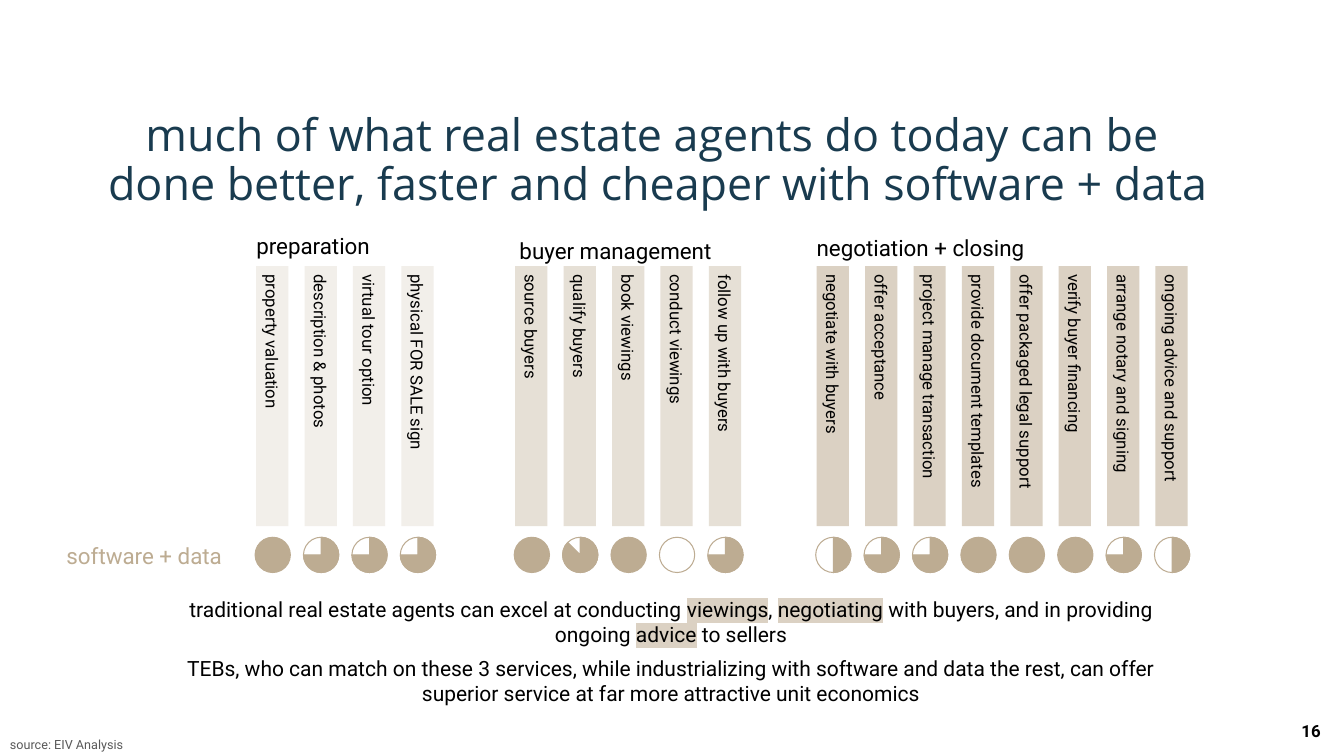
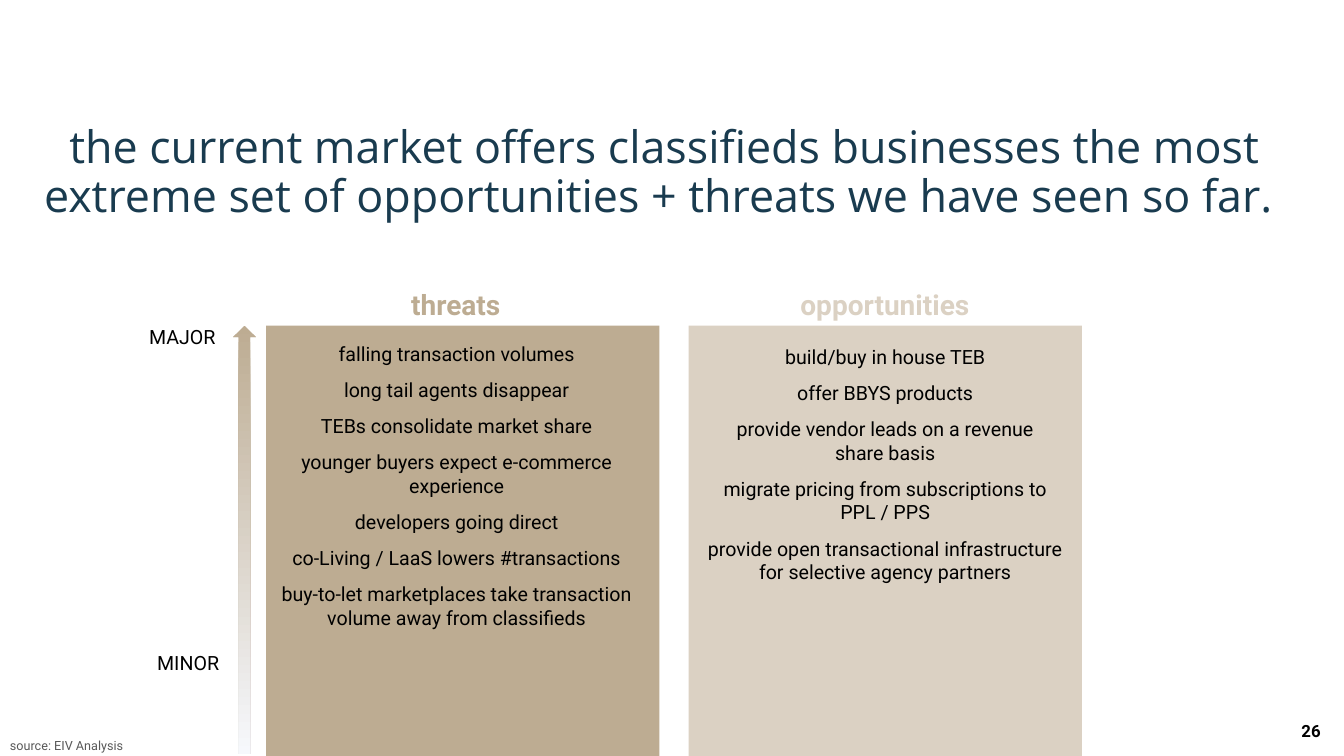
from dataclasses import asdict, dataclass
from typing import Any, NamedTuple, Sequence

from lxml import etree
from pptx import Presentation
from pptx.dml.color import RGBColor
from pptx.enum.shapes import MSO_SHAPE
from pptx.enum.text import MSO_ANCHOR, MSO_AUTO_SIZE, PP_ALIGN
from pptx.oxml.ns import qn
from pptx.util import Pt

RECTANGLE, ELLIPSE, PIE, UP_ARROW = (
    MSO_SHAPE.RECTANGLE, MSO_SHAPE.OVAL, MSO_SHAPE.PIE, MSO_SHAPE.UP_ARROW)
LEFT, CENTER = PP_ALIGN.LEFT, PP_ALIGN.CENTER
TOP, MIDDLE = MSO_ANCHOR.TOP, MSO_ANCHOR.MIDDLE
NO_AUTOFIT = MSO_AUTO_SIZE.NONE

# Shared look
PX = 9144  # EMU per px, 100 px to the inch
SLIDE_WIDTH, SLIDE_HEIGHT = 1333, 750
NAVY = RGBColor(0x19, 0x3B, 0x4F)
TAN = RGBColor(0xBD, 0xAC, 0x92)
SAND = RGBColor(0xDB, 0xD1, 0xC3)
MIST = RGBColor(0xF6, 0xF8, 0xFC)
GREY = RGBColor(0x59, 0x59, 0x59)
BLACK = RGBColor(0, 0, 0)
WHITE = RGBColor(0xFF, 0xFF, 0xFF)


@dataclass(frozen=True)
class Box:
    left: int
    top: int
    width: int
    height: int


@dataclass(frozen=True)
class Style:
    size: int
    color: RGBColor = BLACK
    bold: bool = False
    name: str = "Roboto"


class Insets(NamedTuple):
    left: int
    top: int
    right: int
    bottom: int


class Span(NamedTuple):
    text: str
    marked: bool = False


class Activity(NamedTuple):
    label: str
    share: float  # part that software and data can do


class Stage(NamedTuple):
    heading: str
    heading_box: Box
    first_bar: int
    opacity: int
    activities: Sequence[Activity]


class Column(NamedTuple):
    heading: str
    heading_box: Box
    panel: Box
    insets: Insets
    color: RGBColor
    items: Sequence[str]


TITLE = Style(32, NAVY, name="Open Sans")
PAGE_NUMBER = Style(12, bold=True)
SOURCE = Style(9, GREY)
STAGE_HEADING = Style(16)
ROW_LABEL = Style(16, TAN)
BAR_LABEL = Style(12)
TAKEAWAY = Style(15)
LIST_ITEM = Style(14)

NO_INSETS = Insets(0, 0, 0, 0)
WIDE_INSETS = Insets(10, 10, 10, 10)
TEXT_INSETS = Insets(10, 5, 10, 5)

# Slide content
BAR_TOP, BAR_WIDTH, BAR_LENGTH, BAR_PITCH = 264, 32, 258, 48
PIE_TOP, PIE_SIZE = 533, 35
PIE_FULL_TURN = 216  # 360 degrees in the units of the pie adjustment

STAGES = (
    Stage("preparation", Box(223, 230, 175, 38), 254, 34, (
        Activity("property valuation", 1),
        Activity("description & photos", 0.75),
        Activity("virtual tour option", 0.75),
        Activity("physical FOR SALE sign", 0.75),
    )),
    Stage("buyer management", Box(477, 235, 267, 29), 511, 67, (
        Activity("source buyers", 1),
        Activity("qualify buyers", 0.875),
        Activity("book viewings", 1),
        Activity("conduct viewings", 0),
        Activity("follow up with buyers", 0.75),
    )),
    Stage("negotiation + closing", Box(756, 232, 314, 29), 810, 100, (
        Activity("negotiate with buyers", 0.5),
        Activity("offer acceptance", 0.75),
        Activity("project manage transaction", 0.75),
        Activity("provide document templates", 1),
        Activity("offer packaged legal support", 1),
        Activity("verify buyer financing", 1),
        Activity("arrange notary and signing", 0.75),
        Activity("ongoing advice and support", 0.5),
    )),
)

TAKEAWAYS = (
    (Span("traditional real estate agents can excel at conducting "),
     Span("viewings", True), Span(", "), Span("negotiating", True),
     Span(" with buyers, and in providing ongoing "),
     Span("advice", True), Span(" to sellers")),
    (Span("TEBs, who can match on these 3 services, while industrializing with "
          "software and data the rest, can offer superior service at far more "
          "attractive unit economics"),),
)

COLUMNS = (
    Column("threats", Box(398, 280, 110, 44), Box(264, 323, 390, 427),
           Insets(7, 16, 19, 5), TAN, (
               "falling transaction volumes",
               "long tail agents disappear",
               "TEBs consolidate market share",
               "younger buyers expect e-commerce experience",
               "developers going direct",
               "co-Living / LaaS lowers #transactions",
               "buy-to-let marketplaces take transaction volume away from classifieds",
           )),
    Column("opportunities", Box(784, 280, 188, 44), Box(683, 323, 390, 427),
           Insets(10, 19, 10, 5), SAND, (
               "build/buy in house TEB",
               "offer BBYS products",
               "provide vendor leads on a revenue\nshare basis",
               "migrate pricing from subscriptions to\nPPL / PPS",
               "provide open transactional infrastructure for selective agency partners",
           )),
)

SCALE_LABELS = (
    ("MAJOR", Box(138, 317, 87, 34)),
    ("MINOR", Box(146, 641, 83, 34)),
)


# Drawing helpers
def apply(target: Any, values: dict[str, Any]) -> None:
    for name, value in values.items():
        setattr(target, name, value)


def emu(box: Box) -> dict[str, int]:
    return {side: length * PX for side, length in asdict(box).items()}


def add_span(paragraph: Any, span: Span, style: Style) -> None:
    for index, line in enumerate(span.text.split("\n")):
        if index:
            paragraph.add_line_break()
        run = paragraph.add_run()
        run.text = line
        apply(run.font, {"size": Pt(style.size), "bold": style.bold, "name": style.name})
        run.font.color.rgb = style.color
        if span.marked:
            highlight = etree.Element(qn("a:highlight"))
            etree.SubElement(highlight, qn("a:srgbClr"), val=str(SAND))
            run.font.fill  # the colour element precedes the highlight
            run.font._element.find(qn("a:solidFill")).addnext(highlight)


def write(shape: Any, paragraphs: Sequence[Sequence[Span]], style: Style,
          insets: Insets = TEXT_INSETS, align: Any = LEFT, anchor: Any = TOP,
          wrap: bool = True, gap_before: int = 0, gap_after: int = 0,
          line_spacing: float = 1.0) -> None:
    frame = shape.text_frame
    apply(frame, {"word_wrap": wrap, "auto_size": NO_AUTOFIT, "vertical_anchor": anchor})
    apply(frame, {f"margin_{side}": length * PX
                  for side, length in insets._asdict().items()})
    for index, spans in enumerate(paragraphs):
        paragraph = frame.add_paragraph() if index else frame.paragraphs[0]
        if shape.is_placeholder:
            properties = paragraph._p.get_or_add_pPr()
            properties.set("marL", "0")
            properties.set("indent", "0")
            etree.SubElement(properties, qn("a:buNone"))
        apply(paragraph, {
            "alignment": align,
            "line_spacing": line_spacing,
            "space_before": Pt(gap_before if index else 0),
            "space_after": Pt(gap_after),
        })
        for span in spans:
            add_span(paragraph, span, style)


def add_label(slide: Any, text: str, box: Box, style: Style, **layout: Any) -> None:
    write(slide.shapes.add_textbox(**emu(box)), [[Span(text)]], style, **layout)


def add_figure(slide: Any, kind: Any, box: Box, color: RGBColor | None = None,
               outline: RGBColor | None = None) -> Any:
    figure = slide.shapes.add_shape(kind, **emu(box))
    figure.shadow.inherit = False
    if color is not None:
        figure.fill.solid()
        figure.fill.fore_color.rgb = color
    if outline is None:
        figure.line.fill.background()
    else:
        figure.line.color.rgb = outline
        figure.line.width = Pt(0.75)
    return figure


def add_slide(deck: Any, layout: int, title_lines: Sequence[str], title_box: Box,
              page: int, source_top: int) -> Any:
    slide = deck.slides.add_slide(deck.slide_layouts[layout])
    title = slide.shapes.title
    apply(title, emu(title_box))
    write(title, [[Span(line)] for line in title_lines], TITLE, WIDE_INSETS, CENTER,
          line_spacing=0.9)
    add_label(slide, str(page), Box(1281, 702, 52, 47), PAGE_NUMBER,
              insets=WIDE_INSETS, anchor=MIDDLE)
    add_label(slide, "source: EIV Analysis", Box(0, source_top, 1081, 25), SOURCE)
    return slide


def add_bar(slide: Any, label: str, center: int, opacity: int) -> None:
    # The bar lies flat and is turned a quarter, so its text runs downwards
    flat = Box(center - BAR_LENGTH // 2, BAR_TOP + (BAR_LENGTH - BAR_WIDTH) // 2,
               BAR_LENGTH, BAR_WIDTH)
    bar = add_figure(slide, RECTANGLE, flat, SAND)
    bar.rotation = 90
    if opacity < 100:
        color = bar._element.spPr.find(qn("a:solidFill"))[0]
        etree.SubElement(color, qn("a:alpha"), val=str(opacity * 1000))
    write(bar, [[Span(label)]], BAR_LABEL, Insets(8, 0, 0, 0), anchor=MIDDLE, wrap=False)


def add_share(slide: Any, share: float, center: int) -> None:
    box = Box(center - PIE_SIZE // 2, PIE_TOP, PIE_SIZE, PIE_SIZE)
    add_figure(slide, ELLIPSE, box, TAN if share == 1 else WHITE, TAN)
    if 0 < share < 1:
        slice_ = add_figure(slide, PIE, box, TAN, TAN)
        slice_.rotation = 270
        slice_.adjustments[0] = 0
        slice_.adjustments[1] = share * PIE_FULL_TURN


# Slides
def build_activities(deck: Any) -> None:
    slide = add_slide(deck, 1, (
        "much of what real estate agents do today can be ",
        "done better, faster and cheaper with software + data",
    ), Box(32, 102, 1242, 84), 16, 726)
    for stage in STAGES:
        add_label(slide, stage.heading, stage.heading_box, STAGE_HEADING,
                  insets=NO_INSETS, align=CENTER, wrap=False)
        for index, activity in enumerate(stage.activities):
            center = stage.first_bar + index * BAR_PITCH + BAR_WIDTH // 2
            add_bar(slide, activity.label, center, stage.opacity)
            add_share(slide, activity.share, center)
    add_label(slide, "software + data", Box(66, 538, 190, 35), ROW_LABEL,
              insets=NO_INSETS, wrap=False)
    takeaways = slide.placeholders[1]
    apply(takeaways, emu(Box(169, 592, 993, 110)))
    write(takeaways, TAKEAWAYS, TAKEAWAY, NO_INSETS, CENTER, gap_before=6)


def build_outlook(deck: Any) -> None:
    slide = add_slide(deck, 3, (
        "the current market offers classifieds businesses the most "
        "extreme set of opportunities + threats we have seen so far. ",
    ), Box(14, 114, 1291, 84), 26, 727)
    for index, column in enumerate(COLUMNS, start=1):
        panel = slide.placeholders[index]
        apply(panel, emu(column.panel))
        panel.fill.solid()
        panel.fill.fore_color.rgb = column.color
        write(panel, [[Span(item)] for item in column.items], LIST_ITEM,
              column.insets, CENTER, gap_after=9)
        add_label(slide, column.heading, column.heading_box,
                  Style(20, column.color, bold=True), wrap=False)
    for text, box in SCALE_LABELS:
        add_label(slide, text, box, LIST_ITEM, wrap=False)
    severity = add_figure(slide, UP_ARROW, Box(231, 323, 23, 425))
    severity.fill.gradient()
    severity.fill.gradient_angle = 270
    for stop, color in zip(severity.fill.gradient_stops, (TAN, MIST)):
        stop.color.rgb = color


def main() -> None:
    deck = Presentation()
    apply(deck, {"slide_width": SLIDE_WIDTH * PX, "slide_height": SLIDE_HEIGHT * PX})
    build_activities(deck)
    build_outlook(deck)
    deck.save("out.pptx")


if __name__ == "__main__":
    main()
